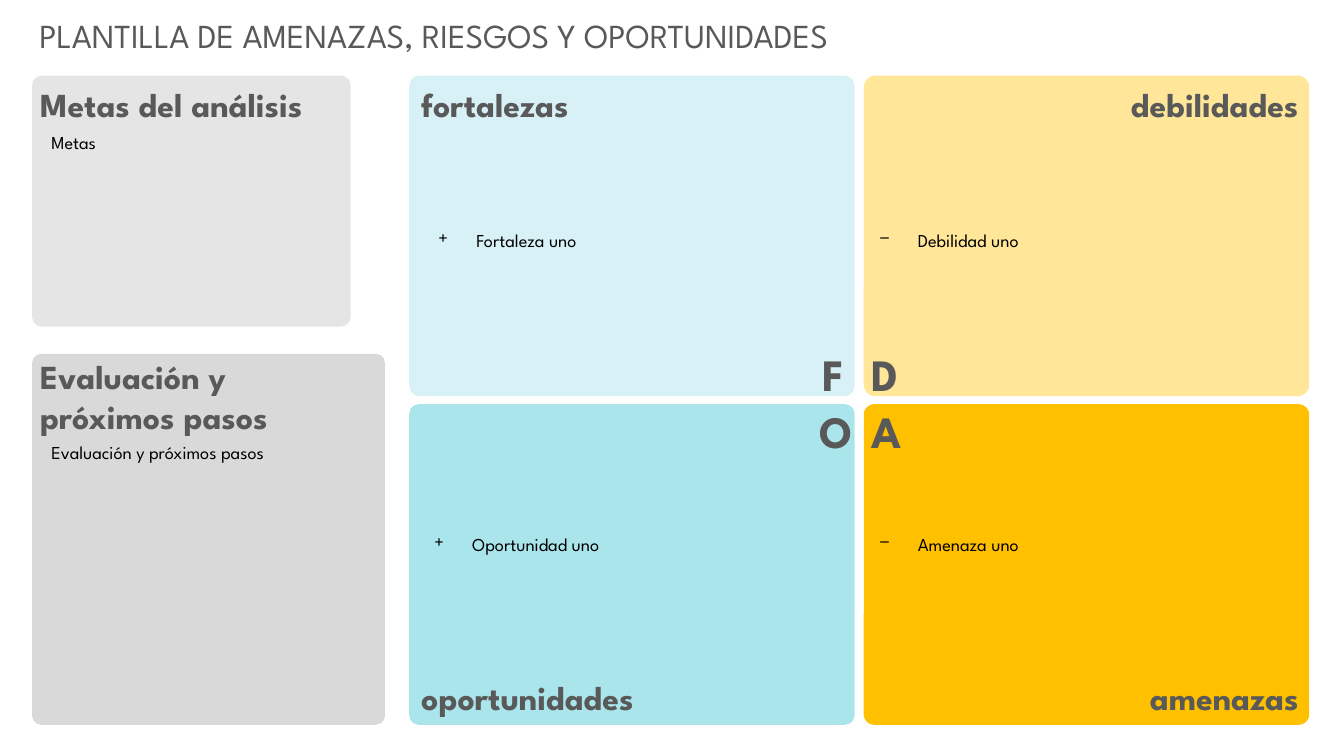
"""Build a one-slide SWOT template in Spanish with goals and next steps."""
import pptx
import pptx.dml.color
import pptx.enum.shapes
import pptx.enum.text
import pptx.oxml.ns
import pptx.util
from lxml import etree

Pt = pptx.util.Pt
RGBColor = pptx.dml.color.RGBColor
ALIGN = pptx.enum.text.PP_ALIGN
ANCHOR = pptx.enum.text.MSO_ANCHOR
FIT = pptx.enum.text.MSO_AUTO_SIZE

FONT = "League Spartan"
GRAY = RGBColor(0x59, 0x59, 0x59)
BLACK = RGBColor(0x00, 0x00, 0x00)
SILVER = RGBColor(0xE5, 0xE5, 0xE5)
ASH = RGBColor(0xD9, 0xD9, 0xD9)
ICE = RGBColor(0xD7, 0xF1, 0xF6)
CREAM = RGBColor(0xFF, 0xE6, 0x99)
AQUA = RGBColor(0xAB, 0xE5, 0xEC)
GOLD = RGBColor(0xFF, 0xC0, 0x00)

GRID_LEFT, GRID_TOP = 292.3, 54
STEP_X, STEP_Y = 324.7, 234.7
CELL_W, CELL_H = 318.2, 229

CELLS = [
    (ICE, 0.033, "fortalezas", (293.8, 56.2), "F", (341.3, 244.1, 268.6),
     "+", "Fortaleza uno", (302.4, 87.1, 266.4, 167)),
    (CREAM, 0.037, "debilidades", (630, 56.2), "D", (615.6, 244.1, 275),
     "−", "Debilidad uno", (617.8, 87.1, 294.5, 166.3)),
    (AQUA, 0.03, "oportunidades", (293.8, 480.2), "O", (341.3, 285.1, 275),
     "+", "Oportunidad uno", (299.5, 288, 278.6, 199.4)),
    (GOLD, 0.033, "amenazas", (630, 480.2), "A", (615.6, 285.1, 266.4),
     "−", "Amenaza uno", (617.8, 288, 308.2, 199.4)),
]
PANELS = [
    (SILVER, 0.038, (23, 54, 227.5, 179.3), "Metas del análisis", 56.2,
     "Metas", (25.9, 87.8, 200.2, 114.5)),
    (ASH, 0.026, (23, 252.7, 252, 265), "Evaluación y \vpróximos pasos", 250.6,
     "Evaluación y próximos pasos", (25.9, 309.6, 248.4, 173.5)),
]


def place(shape, box):
    shape.left, shape.top, shape.width, shape.height = map(Pt, box)


def write(shape, text, size, color, bold=False, align=ALIGN.LEFT,
          inset=7.2, space=1.0, mark=None):
    frame = shape.text_frame
    frame.text = text
    frame.word_wrap = True
    frame.margin_left = Pt(inset)
    frame.margin_right = Pt(7.2)
    frame.margin_top = frame.margin_bottom = Pt(3.6)
    para = frame.paragraphs[0]
    if mark:
        add_mark(para, mark)
    para.alignment = align
    para.line_spacing = space
    para.space_before = Pt(0)
    for run in para.runs:
        run.font.name = FONT
        run.font.size = Pt(size)
        run.font.bold = bold
        run.font.color.rgb = color
    return frame


def add_mark(para, mark):
    props = para._p.get_or_add_pPr()
    props.set("marL", str(Pt(27)))
    props.set("indent", str(-Pt(27)))
    qn = pptx.oxml.ns.qn
    etree.SubElement(props, qn("a:buFont")).set("typeface", FONT)
    etree.SubElement(props, qn("a:buChar")).set("char", mark)


def add_card(slide, box, color, curve):
    kind = pptx.enum.shapes.MSO_SHAPE.ROUNDED_RECTANGLE
    card = slide.shapes.add_shape(kind, *map(Pt, box))
    card.adjustments[0] = curve
    card.shadow.inherit = False
    card.fill.solid()
    card.fill.fore_color.rgb = color
    card.line.fill.background()


def add_text(slide, box, text, size, color, **style):
    label = slide.shapes.add_textbox(*map(Pt, box))
    return write(label, text, size, color, **style)


def add_head(slide, box, text, align=ALIGN.LEFT):
    frame = add_text(slide, box, text, 24, GRAY, bold=True, align=align)
    frame.auto_size = FIT.SHAPE_TO_FIT_TEXT


def set_title(slide, text):
    title = slide.shapes.title
    place(title, (20.9, 7.2, 790.6, 36))
    frame = write(title, text, 24, GRAY)
    frame.vertical_anchor = ANCHOR.TOP
    frame.auto_size = FIT.SHAPE_TO_FIT_TEXT


def set_list(slide, body, box, text, mark):
    slide.shapes.element.append(body.element)
    place(body, box)
    frame = write(body, text, 13, BLACK, inset=10.8, space=1.15, mark=mark)
    frame.vertical_anchor = ANCHOR.MIDDLE
    frame.auto_size = FIT.NONE


def add_panel(slide, color, curve, box, head, top, note, area):
    add_card(slide, box, color, curve)
    add_text(slide, area, note, 13, BLACK, inset=10.8, space=1.15)
    add_head(slide, (21.6, top, 228.2, 65.5), head)


def add_cell(slide, body, index, cell):
    color, curve, head, spot, letter, place_at, mark, item, area = cell
    row, col = divmod(index, 2)
    left, top = GRID_LEFT + col * STEP_X, GRID_TOP + row * STEP_Y
    add_card(slide, (left, top, CELL_W, CELL_H), color, curve)
    set_list(slide, body, area, item, mark)
    outer, inner = (ALIGN.RIGHT, ALIGN.LEFT) if col else (ALIGN.LEFT, ALIGN.RIGHT)
    add_head(slide, (*spot, 304.6, 36), head, outer)
    add_text(slide, (*place_at, 46), letter, 32, GRAY, bold=True, align=inner)


def main():
    deck = pptx.Presentation()
    deck.slide_width, deck.slide_height = Pt(960), Pt(540)
    slide = deck.slides.add_slide(deck.slide_layouts[4])
    set_title(slide, "PLANTILLA DE AMENAZAS, RIESGOS Y OPORTUNIDADES")
    lists = list(slide.placeholders)[1:]
    for panel in PANELS:
        add_panel(slide, *panel)
    for index, (body, cell) in enumerate(zip(lists, CELLS)):
        add_cell(slide, body, index, cell)
    deck.save("out.pptx")


if __name__ == "__main__":
    main()
